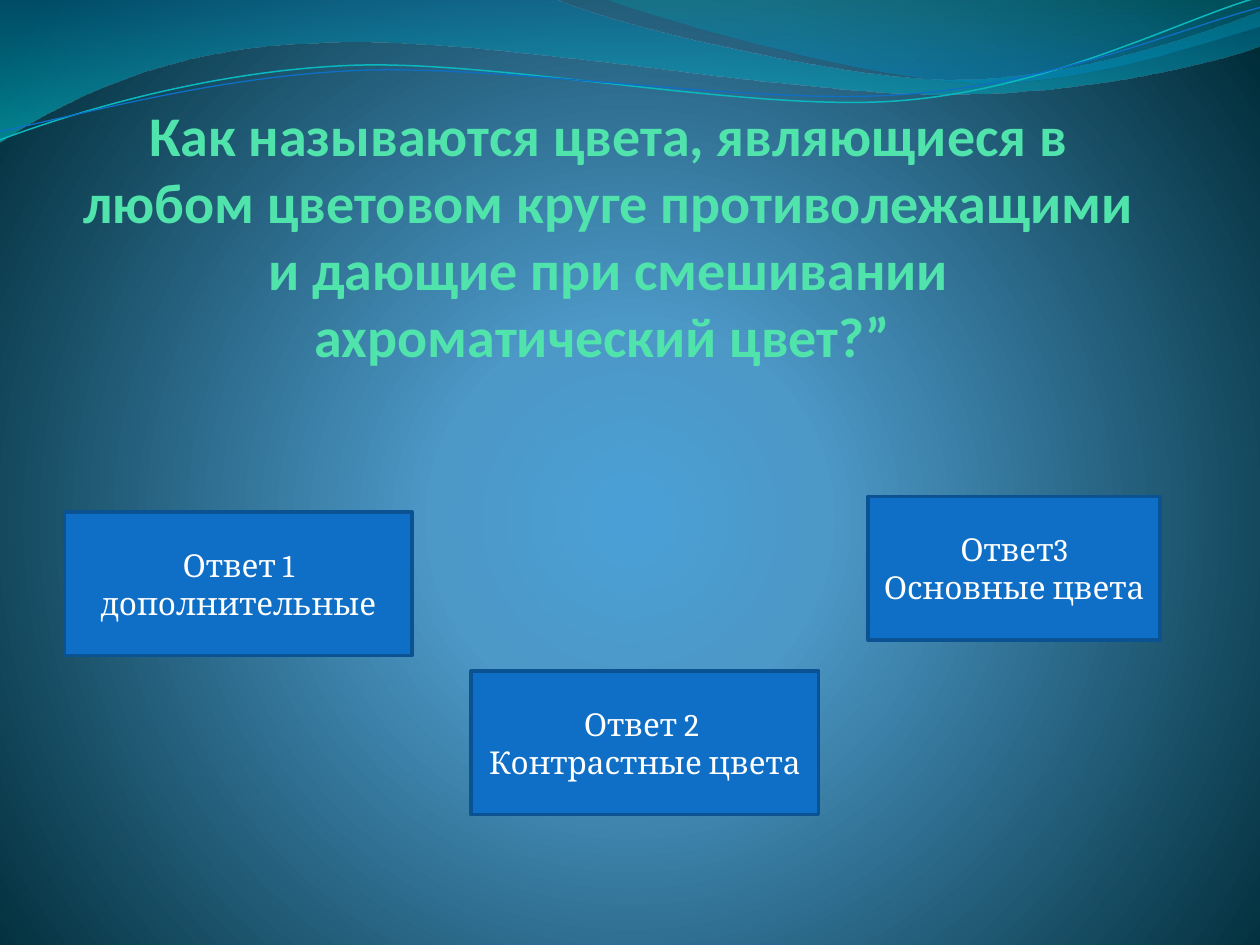
from math import cos, radians, sin

from lxml.etree import SubElement
from pptx import Presentation
from pptx.dml.color import RGBColor
from pptx.enum.shapes import MSO_SHAPE
from pptx.enum.text import MSO_ANCHOR, MSO_AUTO_SIZE, PP_ALIGN
from pptx.oxml.ns import qn
from pptx.util import Pt

HUES = {"title": "50E3AC", "box": "0F6FC6", "edge": "0B5292", "text": "FFFFFF",
        "teal": "0AB8BF", "blue": "0F6FC6"}
SKY = [(0, "4AA0D6", 100), (25, "4C98C7", 100), (100, "002C38", 100)]
TITLE = ("Как называются цвета, являющиеся в любом цветовом круге противолежащими "
         "и дающие при смешивании ахроматический цвет?” ")
BOXES = [
    (37, 292.6, 198.4, ["Ответ 1", "дополнительные"]),
    (269.3, 383.4, 198.4, ["Ответ 2 ", "Контрастные цвета"]),
    (496, 283.6, 167, ["Ответ3", "Основные цвета"]),
]
BANDS = [
    ([(0, -0.7), (316.8, -0.7),
      (342.7, 12.2, 478.1, 45.4, 545.8, 45.4), (614.2, 45.4, 689.8, 18.7, 720, 6.5),
      (720.7, 25.9),
      (707.8, 31.7, 626.4, 54.7, 537.1, 54), (447.8, 54, 275, 20.2, 185, 24.5),
      (92.9, 25.9, 33.1, 59.8, -0.7, 81.4)],
     [(0, "0074A1", 45), (100, "00C6CF", 55)]),
    ([(344.9, -0.7),
      (366.5, 7.9, 491, 44.6, 553.7, 46.8), (616.3, 49.7, 691.9, 23, 720, 15.1),
      (720, 0)],
     [(0, "00A1A9", 30), (80, "008BBF", 45)]),
]
WAVES = [
    ([(0, 79.9), (34.6, 67, 113.8, 41, 199.4, 37.4),
      (284.4, 33.8, 427, 64.1, 513.4, 57.6), (599.8, 51.1, 675.4, 10.8, 718.6, -1.4)],
     "teal", 0.85, (359.3, 41.4)),
    ([(0, 74.9), (33.8, 69.1, 118.1, 43.9, 203.8, 40.3),
      (290.2, 36.7, 429.8, 60.5, 516.2, 54), (601.9, 48.2, 677.5, 15.1, 720, 4.3)],
     "blue", 0.75, (359.6, 42.5)),
]
TILT = 2.7


def tone(name):
    return RGBColor.from_string(HUES[name])


def blend(fill, root, stops, round_to=None):
    fill.gradient()
    grad = root.find(".//" + qn("a:gradFill"))
    for kid in list(grad):
        grad.remove(kid)
    items = SubElement(grad, qn("a:gsLst"))
    for pos, hue, alpha in stops:
        stop = SubElement(items, qn("a:gs"), pos=str(pos * 1000))
        color = SubElement(stop, qn("a:srgbClr"), val=hue)
        if alpha < 100:
            SubElement(color, qn("a:alpha"), val=str(alpha * 1000))
    if round_to:
        ring = SubElement(grad, qn("a:path"), {"path": "circle"})
        rect = {side: str(part * 1000) for side, part in zip("ltrb", round_to)}
        SubElement(ring, qn("a:fillToRect"), rect)
    else:
        SubElement(grad, qn("a:lin"), ang="5400000", scaled="0")


def level(part, mid):
    turn = radians(TILT)
    flat = []
    for x, y in zip(part[::2], part[1::2]):
        dx, dy = x - mid[0], y - mid[1]
        flat += [mid[0] + dx * cos(turn) - dy * sin(turn),
                 mid[1] + dx * sin(turn) + dy * cos(turn)]
    return tuple(flat)


def outline(slide, parts, close):
    dots = [(Pt(x), Pt(y)) for part in parts for x, y in zip(part[::2], part[1::2])]
    pen = slide.shapes.build_freeform(*dots[0])
    pen.add_line_segments(dots[1:], close=close)
    shape = pen.convert_to_shape()
    shape.shadow.inherit = False
    lines = iter(shape.element.findall(".//" + qn("a:lnTo")))
    for part in parts[1:]:
        line = next(lines)
        if len(part) == 6:
            curve = SubElement(line.getparent(), qn("a:cubicBezTo"))
            line.addprevious(curve)
            for old in (line, next(lines), next(lines)):
                curve.append(old[0])
                old.getparent().remove(old)
    return shape


def write(para, text, font, size, hue, bold=False):
    para.alignment = PP_ALIGN.CENTER
    run = para.add_run()
    run.text = text
    run.font.name = font
    run.font.size = Pt(size)
    run.font.bold = bold
    run.font.color.rgb = tone(hue)


def add_title(slide):
    title = slide.shapes.title
    title.left, title.top, title.width, title.height = Pt(41.8), Pt(103.7), Pt(612), Pt(107.3)
    frame = title.text_frame
    frame.word_wrap = True
    frame.auto_size = MSO_AUTO_SIZE.NONE
    frame.vertical_anchor = MSO_ANCHOR.BOTTOM
    frame.margin_left = frame.margin_right = frame.margin_top = frame.margin_bottom = Pt(0)
    write(frame.paragraphs[0], TITLE, "Calibri", 32, "title", True)


def add_box(slide, left, top, width, lines):
    box = slide.shapes.add_shape(MSO_SHAPE.ACTION_BUTTON_CUSTOM,
                                 Pt(left), Pt(top), Pt(width), Pt(82))
    box.shadow.inherit = False
    box.fill.solid()
    box.fill.fore_color.rgb = tone("box")
    box.line.color.rgb = tone("edge")
    box.line.width = Pt(2)
    frame = box.text_frame
    frame.word_wrap = True
    frame.vertical_anchor = MSO_ANCHOR.MIDDLE
    for i, line in enumerate(lines):
        para = frame.add_paragraph() if i else frame.paragraphs[0]
        write(para, line, "Cambria", 18, "text")


def main():
    deck = Presentation()
    deck.slide_width, deck.slide_height = Pt(720), Pt(540)
    slide = deck.slides.add_slide(deck.slide_layouts[5])
    blend(slide.background.fill, slide.element, SKY, (10, 110, 10, 100))
    for parts, stops in BANDS:
        band = outline(slide, parts, True)
        blend(band.fill, band.element, stops)
        band.line.fill.background()
    for parts, hue, width, mid in WAVES:
        wave = outline(slide, [level(part, mid) for part in parts], False)
        wave.rotation = 360 - TILT
        wave.fill.background()
        wave.line.color.rgb = tone(hue)
        wave.line.width = Pt(width)
    add_title(slide)
    for box in BOXES:
        add_box(slide, *box)
    deck.save("out.pptx")


if __name__ == "__main__":
    main()
